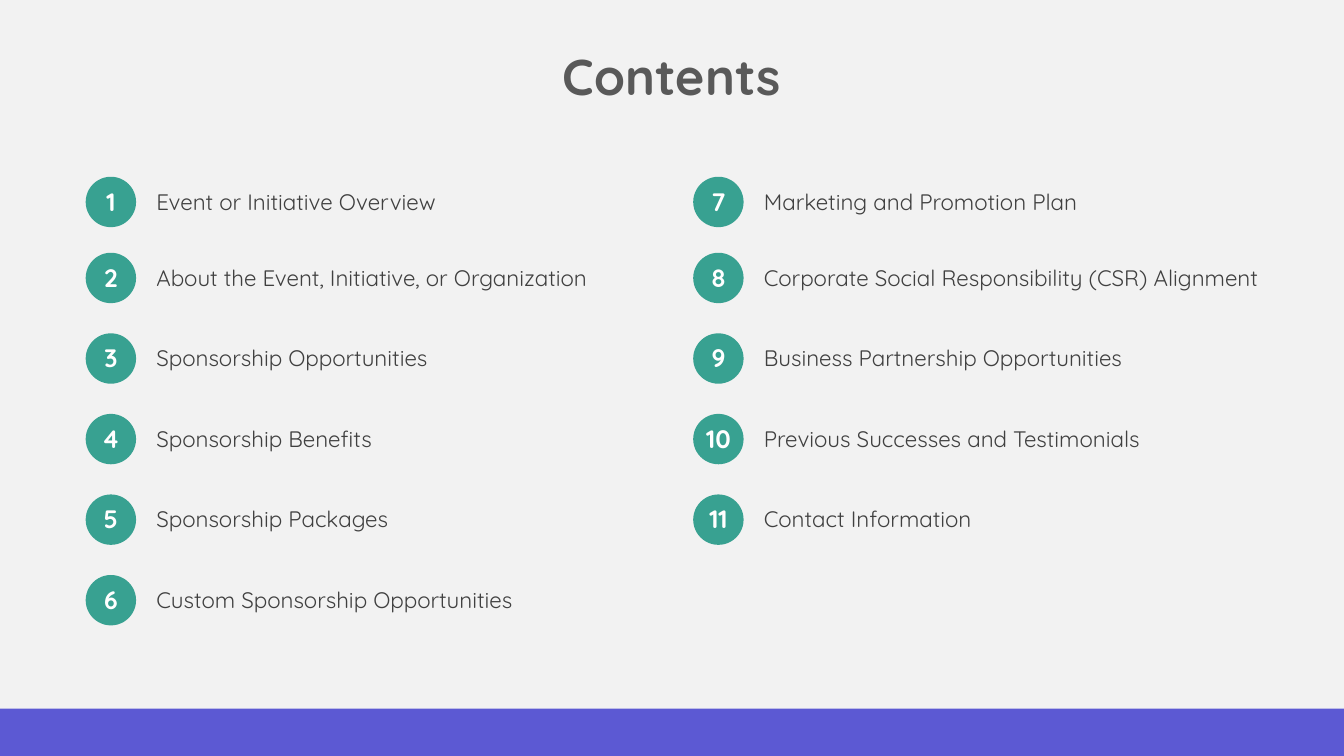
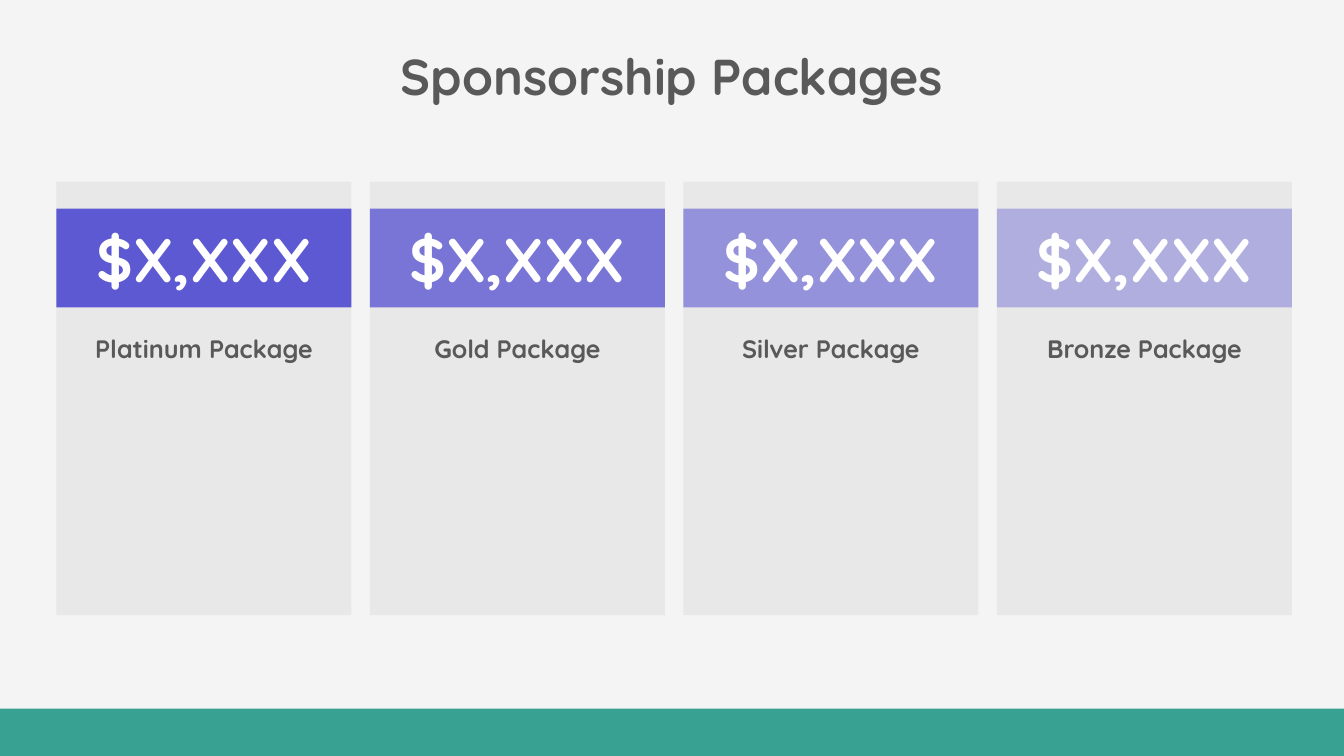
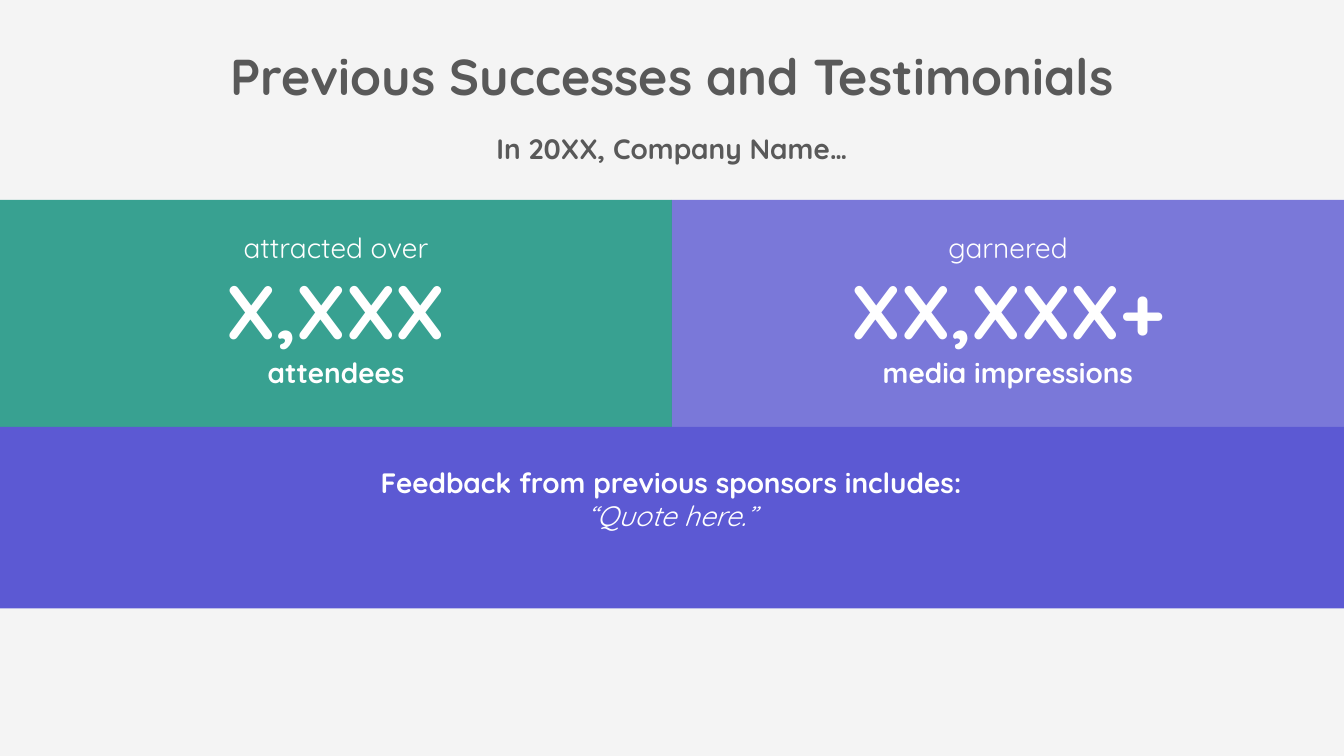
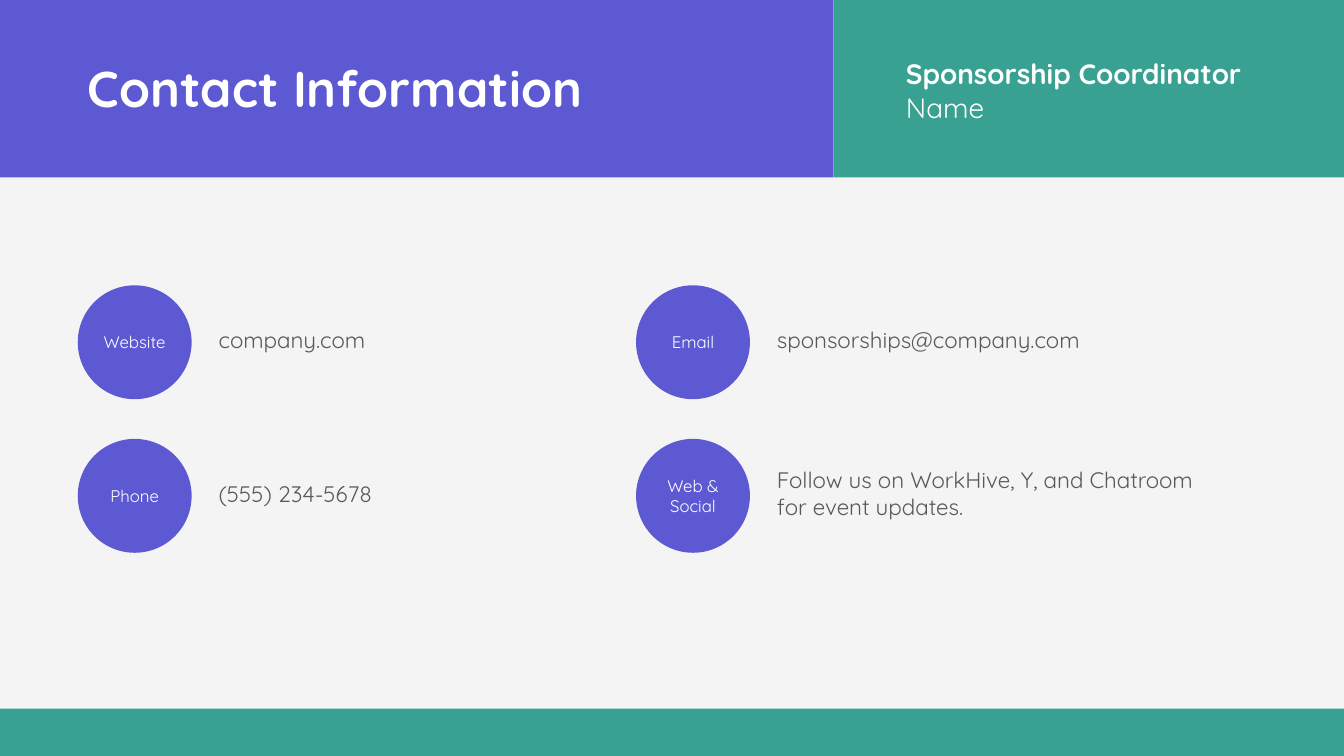
from pptx import Presentation
from pptx.dml.color import RGBColor
from pptx.enum.shapes import MSO_SHAPE
from pptx.enum.text import MSO_ANCHOR, MSO_AUTO_SIZE, PP_ALIGN
from pptx.oxml.ns import qn
from pptx.util import Cm, Pt
from lxml import etree

RECT = MSO_SHAPE.RECTANGLE
OVAL = MSO_SHAPE.OVAL
LEFT = PP_ALIGN.LEFT
CENTER = PP_ALIGN.CENTER
TOP = MSO_ANCHOR.TOP
MIDDLE = MSO_ANCHOR.MIDDLE
GROW = MSO_AUTO_SIZE.SHAPE_TO_FIT_TEXT

FONT = "Quicksand"
PURPLE = RGBColor(0x5C, 0x59, 0xD3)
TEAL = RGBColor(0x38, 0xA1, 0x91)
WHITE = RGBColor(0xFF, 0xFF, 0xFF)
PALE = RGBColor(0xF4, 0xF4, 0xF4)
MIST = RGBColor(0xF2, 0xF2, 0xF2)
CARD = RGBColor(0xE7, 0xE6, 0xE6)
GRAY = RGBColor(0x59, 0x59, 0x59)
DARK = RGBColor(0x40, 0x40, 0x40)

WIDE = 33.87
HIGH = 19.05
HALF = WIDE / 2
FOOT = 1.19
PLAIN = "{2D5ABB26-0587-4C30-8999-92F81FD0307C}"

TOPICS = [
    "Event or Initiative Overview",
    "About the Event, Initiative, or Organization",
    "Sponsorship Opportunities",
    "Sponsorship Benefits",
    "Sponsorship Packages",
    "Custom Sponsorship Opportunities",
    "Marketing and Promotion Plan",
    "Corporate Social Responsibility (CSR) Alignment",
    "Business Partnership Opportunities",
    "Previous Successes and Testimonials",
    "Contact Information",
]
TIERS = ["Platinum", "Gold", "Silver", "Bronze"]
STATS = [
    ("attracted over", "X,XXX", "attendees", TEAL, 100),
    ("garnered", "XX,XXX+", "media impressions", PURPLE, 80),
]
WAYS = [
    ("Website", "company.com", 8.59, 0.94),
    ("Email", "sponsorships@company.com", 13.11, 0.94),
    ("Phone", "(555) 234-5678", 6.88, 0.94),
    ("Web & Social",
     "Follow us on WorkHive, Y, and Chatroom for event updates.",
     11.05, 1.63),
]


def write(frame, text, size=16, color=GRAY, bold=False, italic=False,
          align=CENTER):
    para = frame.paragraphs[0]
    if para.runs:
        para = frame.add_paragraph()
    para.alignment = align
    run = para.add_run()
    run.text = text
    font = run.font
    font.name = FONT
    font.size = Pt(size)
    font.color.rgb = color
    font.bold = bold
    font.italic = italic


def place(shape, left, top, width, height):
    shape.left, shape.top = Cm(left), Cm(top)
    shape.width, shape.height = Cm(width), Cm(height)


def block(slide, kind, left, top, width, height, color, alpha=100):
    shape = slide.shapes.add_shape(
        kind, Cm(left), Cm(top), Cm(width), Cm(height))
    shape.shadow.inherit = False
    shape.line.fill.background()
    shape.fill.solid()
    shape.fill.fore_color.rgb = color
    if alpha < 100:
        tint = next(shape.fill._xPr.iter(qn("a:srgbClr")))
        etree.SubElement(tint, qn("a:alpha"), val=str(alpha * 1000))
    frame = shape.text_frame
    frame.word_wrap = True
    frame.vertical_anchor = MIDDLE
    return frame


def box(slide, left, top, width, height):
    shape = slide.shapes.add_textbox(
        Cm(left), Cm(top), Cm(width), Cm(height))
    frame = shape.text_frame
    frame.word_wrap = True
    frame.auto_size = GROW
    return frame


def start(deck, back=PALE):
    slide = deck.slides.add_slide(deck.slide_layouts[5])
    slide.background.fill.solid()
    slide.background.fill.fore_color.rgb = back
    return slide


def title(slide, text, width, left=None, top=1.02, **style):
    shape = slide.shapes.title
    if left is None:
        left = (WIDE - width) / 2
    place(shape, left, top, width, 1.8)
    frame = shape.text_frame
    frame.word_wrap = True
    frame.auto_size = GROW
    frame.vertical_anchor = TOP
    write(frame, text, size=36, bold=True, **style)
    slide.shapes._spTree.append(shape._element)


def footer(slide, color):
    block(slide, RECT, 0, HIGH - FOOT, WIDE, FOOT, color)


def cell(grid, row, col, text, **style):
    item = grid.cell(row, col)
    item.fill.background()
    item.vertical_anchor = MIDDLE
    if col:
        item.margin_left = Cm(0.51)
    else:
        item.margin_left = item.margin_right = Cm(0)
    write(item.text_frame, text, **style)


def topics(slide, left, width, first, names):
    rows = [1.8] + [2.03] * (len(names) - 1)
    disc = 1.27
    top = 4.19
    for i, row in enumerate(rows):
        mid = top + sum(rows[:i]) + row / 2
        block(slide, OVAL, left, mid - disc / 2, disc, disc, TEAL)
    grid = slide.shapes.add_table(
        len(rows), 2, Cm(left), Cm(top), Cm(disc + width),
        Cm(sum(rows))).table
    grid._tbl.tblPr.find(qn("a:tableStyleId")).text = PLAIN
    grid.first_row = grid.horz_banding = False
    grid.columns[0].width = Cm(disc)
    grid.columns[1].width = Cm(width)
    for i, name in enumerate(names):
        grid.rows[i].height = Cm(rows[i])
        cell(grid, i, 0, str(first + i), size=18, color=WHITE, bold=True)
        cell(grid, i, 1, name, color=DARK, align=LEFT)


def contents(deck):
    slide = start(deck, MIST)
    title(slide, "Contents", 23.62)
    topics(slide, 2.16, 12.55, 1, TOPICS[:6])
    topics(slide, 17.47, 13.97, 7, TOPICS[6:])
    footer(slide, PURPLE)


def packages(deck):
    slide = start(deck)
    title(slide, "Sponsorship Packages", 19.5)
    for i, tier in enumerate(TIERS):
        left = 1.42 + i * 7.9
        frame = block(slide, RECT, left, 4.58, 7.44, 10.92, CARD, 80)
        frame.vertical_anchor = TOP
        frame.margin_left = frame.margin_right = Cm(0.76)
        frame.margin_top = Cm(3.81)
        write(frame, f"{tier} Package", size=18, bold=True)
        frame = block(slide, RECT, left, 5.26, 7.44, 2.49, PURPLE,
                      100 - 20 * i)
        write(frame, "$X,XXX", size=44, color=WHITE, bold=True)
    footer(slide, TEAL)


def results(deck):
    slide = start(deck)
    title(slide, "Previous Successes and Testimonials", 25.18)
    frame = box(slide, HALF / 2, 3.2, HALF, 1.11)
    write(frame, "In 20XX, Company Name…", size=20, bold=True)
    for i, (lead, count, unit, color, alpha) in enumerate(STATS):
        left = i * HALF
        block(slide, RECT, left, 5.04, HALF, 5.72, color, alpha)
        frame = box(slide, left, 5.69, HALF, 4.27)
        write(frame, lead, size=20, color=WHITE)
        write(frame, count, size=54, color=WHITE, bold=True)
        write(frame, unit, size=20, color=WHITE, bold=True)
    block(slide, RECT, 0, 10.76, WIDE, 4.57, PURPLE)
    frame = box(slide, 7.17, 11.6, 19.5, 2.82)
    write(frame, "Feedback from previous sponsors includes:", size=20,
          color=WHITE, bold=True)
    write(frame, "“Quote here.”", size=20, color=WHITE, italic=True)


def contact(deck):
    slide = start(deck)
    split = 21
    block(slide, RECT, split, 0, WIDE - split, 4.47, TEAL)
    block(slide, RECT, 0, 0, split, 4.47, PURPLE)
    title(slide, "Contact Information", 14.38, left=1.96, top=1.3,
          color=WHITE, align=LEFT)
    frame = box(slide, 22.58, 1.3, 10, 1.96)
    write(frame, "Sponsorship Coordinator", size=20, color=WHITE,
          bold=True, align=LEFT)
    write(frame, "Name", size=20, color=WHITE, align=LEFT)
    disc = 2.87
    for i, (label, text, width, height) in enumerate(WAYS):
        row, col = divmod(i, 2)
        left = 1.96 + col * 14.07
        top = 7.19 + row * 3.87
        frame = block(slide, OVAL, left, top, disc, disc, PURPLE)
        frame.margin_left = frame.margin_right = Cm(0)
        write(frame, label, size=12, color=WHITE)
        frame = box(slide, left + 3.3, top + (disc - height) / 2 - 0.06,
                    width, height)
        write(frame, text, align=LEFT)
    footer(slide, TEAL)


def main():
    deck = Presentation()
    deck.slide_width = Cm(WIDE)
    deck.slide_height = Cm(HIGH)
    contents(deck)
    packages(deck)
    results(deck)
    contact(deck)
    deck.save("out.pptx")


if __name__ == "__main__":
    main()
